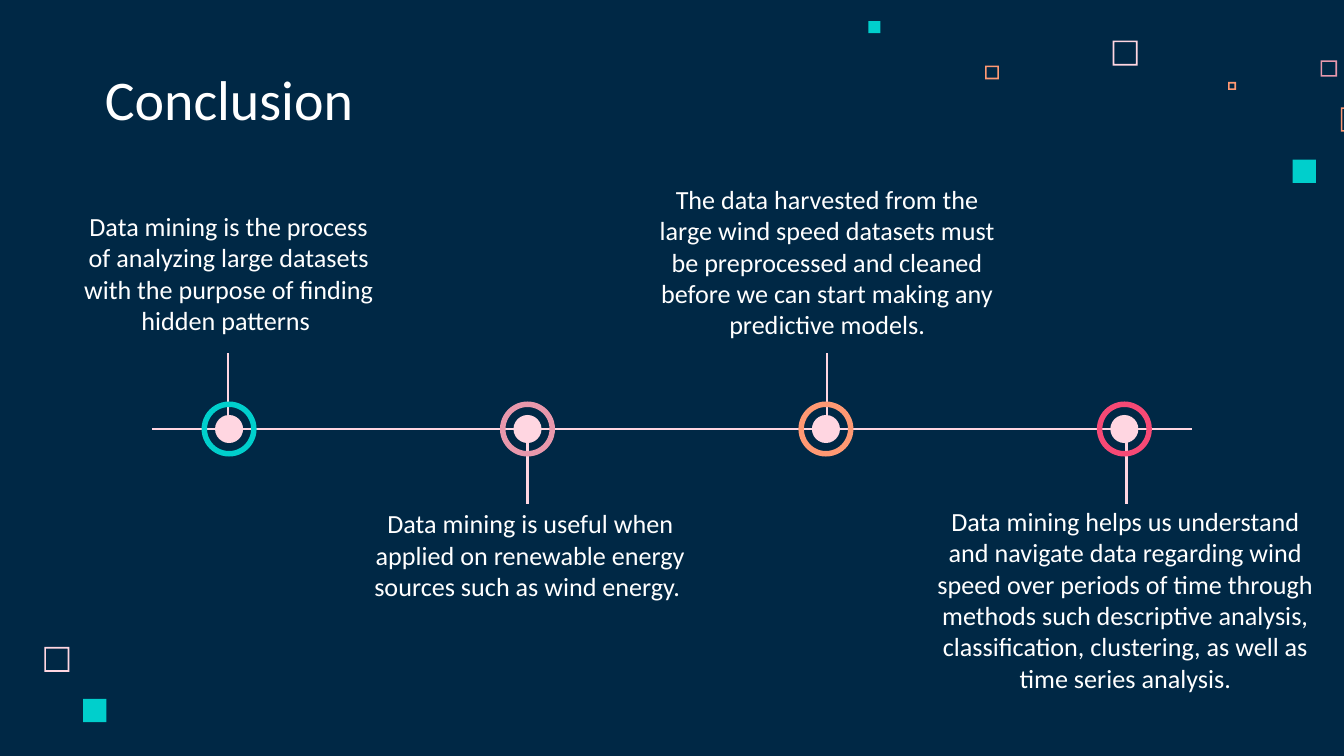
"""Build a conclusion slide with a four-step timeline."""
from dataclasses import dataclass

import pptx
import pptx.dml.color
import pptx.enum.shapes
import pptx.enum.text
import pptx.oxml.ns
import pptx.util
from lxml import etree

RGBColor = pptx.dml.color.RGBColor
Cm = pptx.util.Cm
Pt = pptx.util.Pt
MSO_SHAPE = pptx.enum.shapes.MSO_SHAPE
ANCHOR = pptx.enum.text.MSO_ANCHOR
ALIGN = pptx.enum.text.PP_ALIGN

NAVY = RGBColor(0x00, 0x28, 0x45)
WHITE = RGBColor(0xFF, 0xFF, 0xFF)
BLUSH = RGBColor(0xFF, 0xD6, 0xE1)
ROSE = RGBColor(0xE8, 0x98, 0xAC)
ORANGE = RGBColor(0xFF, 0x99, 0x73)
TEAL = RGBColor(0x00, 0xCF, 0xCC)
RED = RGBColor(0xF6, 0x49, 0x75)

AXIS_Y = 8.11
NODE_X, NODE_STEP = 4.33, 5.64
STEM_X, STEM_STEP = 4.31, 5.66
DOT, RING = 0.53, 1.04
BORDER = 0.03
FRAME_FORMAT = {"word_wrap": True, "auto_size": pptx.enum.text.MSO_AUTO_SIZE.NONE}
MARGINS = dict.fromkeys(
    ("margin_left", "margin_top", "margin_right", "margin_bottom"), Cm(0.25))


@dataclass
class Square:
    x: float
    y: float
    size: float
    color: RGBColor
    solid: bool = False


@dataclass
class Step:
    text: str
    box: tuple[float, float, float, float]
    color: RGBColor
    above: bool


SQUARES = [
    Square(21.03, 0.77, 0.47, BLUSH),
    Square(24.96, 1.14, 0.31, ROSE),
    Square(23.21, 1.55, 0.15, ORANGE),
    Square(25.34, 2.03, 0.46, ORANGE),
    Square(24.43, 3.02, 0.44, TEAL, True),
    Square(18.62, 1.24, 0.26, ORANGE),
    Square(16.41, 0.4, 0.23, TEAL, True),
    Square(0.84, 12.23, 0.47, BLUSH),
    Square(1.57, 13.21, 0.44, TEAL, True),
]

STEPS = [
    Step("Data mining is the process of analyzing large datasets with the "
         "purpose of finding hidden patterns ",
         (1.24, 3.91, 6.17, 2.69), TEAL, True),
    Step("Data mining is useful when applied on renewable energy sources "
         "such as wind energy. ",
         (6.43, 9.35, 7.19, 2.77), ROSE, False),
    Step("The data harvested from the large wind speed datasets must be "
         "preprocessed and cleaned before we can start making any predictive models.",
         (12.14, 3.33, 6.99, 3.35), ORANGE, True),
    Step("Data mining helps us understand and navigate data regarding wind "
         "speed over periods of time through methods such descriptive analysis, "
         "classification, clustering, as well as time series analysis.",
         (17.32, 9.3, 7.9, 3.53), RED, False),
]


def set_all(target: object, values: dict) -> None:
    for name, value in values.items():
        setattr(target, name, value)


def add_filled(shapes, kind, x: float, y: float, size: float,
               color: RGBColor, adj: float | None = None) -> None:
    sp = shapes.add_shape(kind, Cm(x), Cm(y), Cm(size), Cm(size))
    sp.shadow.inherit = False
    sp.fill.solid()
    sp.fill.fore_color.rgb = color
    sp.line.fill.background()
    if adj is not None:
        sp.adjustments[0] = adj


def add_square(shapes, sq: Square) -> None:
    kind = MSO_SHAPE.RECTANGLE if sq.solid else MSO_SHAPE.FRAME
    adj = None if sq.solid else BORDER / sq.size
    add_filled(shapes, kind, sq.x, sq.y, sq.size, sq.color, adj)


def add_line(shapes, x1: float, y1: float, x2: float, y2: float) -> None:
    ln = shapes.add_connector(pptx.enum.shapes.MSO_CONNECTOR.STRAIGHT,
                              Cm(x1), Cm(y1), Cm(x2), Cm(y2))
    ln.line.color.rgb = BLUSH
    ln.line.width = Pt(1.5)
    etree.SubElement(ln._element.spPr, pptx.oxml.ns.qn("a:effectLst"))


def add_node(shapes, i: int, color: RGBColor) -> None:
    grp = shapes.add_group_shape()
    x = NODE_X + i * NODE_STEP
    add_filled(grp.shapes, MSO_SHAPE.OVAL, x - DOT / 2, AXIS_Y - DOT / 2, DOT, BLUSH)
    add_filled(grp.shapes, MSO_SHAPE.DONUT, x - RING / 2, AXIS_Y - RING / 2,
               RING, color, 0.1)


def write_text(sp, text: str, size: float, align, anchor) -> None:
    tf = sp.text_frame
    set_all(tf, FRAME_FORMAT | MARGINS | {"vertical_anchor": anchor})
    p = tf.paragraphs[0]
    p.alignment = align
    r = p.add_run()
    r.text = text
    set_all(r.font, {"name": "Calibri", "size": Pt(size)})
    r.font.color.rgb = WHITE


def main() -> None:
    prs = pptx.Presentation()
    set_all(prs, {"slide_width": Cm(25.4), "slide_height": Cm(14.29)})
    s = prs.slides.add_slide(prs.slide_layouts[5])
    s.background.fill.solid()
    s.background.fill.fore_color.rgb = NAVY

    title = s.shapes.title
    set_all(title, {"left": Cm(1.73), "top": Cm(1.14),
                    "width": Cm(13.13), "height": Cm(1.6)})
    write_text(title, "Conclusion", 30, ALIGN.LEFT, ANCHOR.BOTTOM)

    for sq in SQUARES:
        add_square(s.shapes, sq)
    for i, step in enumerate(STEPS):
        x = STEM_X + i * STEM_STEP
        top, bottom = (6.68, 7.95) if step.above else (8.28, 9.53)
        add_line(s.shapes, x, top, x, bottom)
    add_line(s.shapes, 2.87, AXIS_Y, 22.53, AXIS_Y)
    for i, step in enumerate(STEPS):
        add_node(s.shapes, i, step.color)
        sp = s.shapes.add_textbox(*map(Cm, step.box))
        write_text(sp, step.text, 14, ALIGN.CENTER,
                   ANCHOR.BOTTOM if step.above else ANCHOR.TOP)

    prs.save("out.pptx")


if __name__ == "__main__":
    main()
